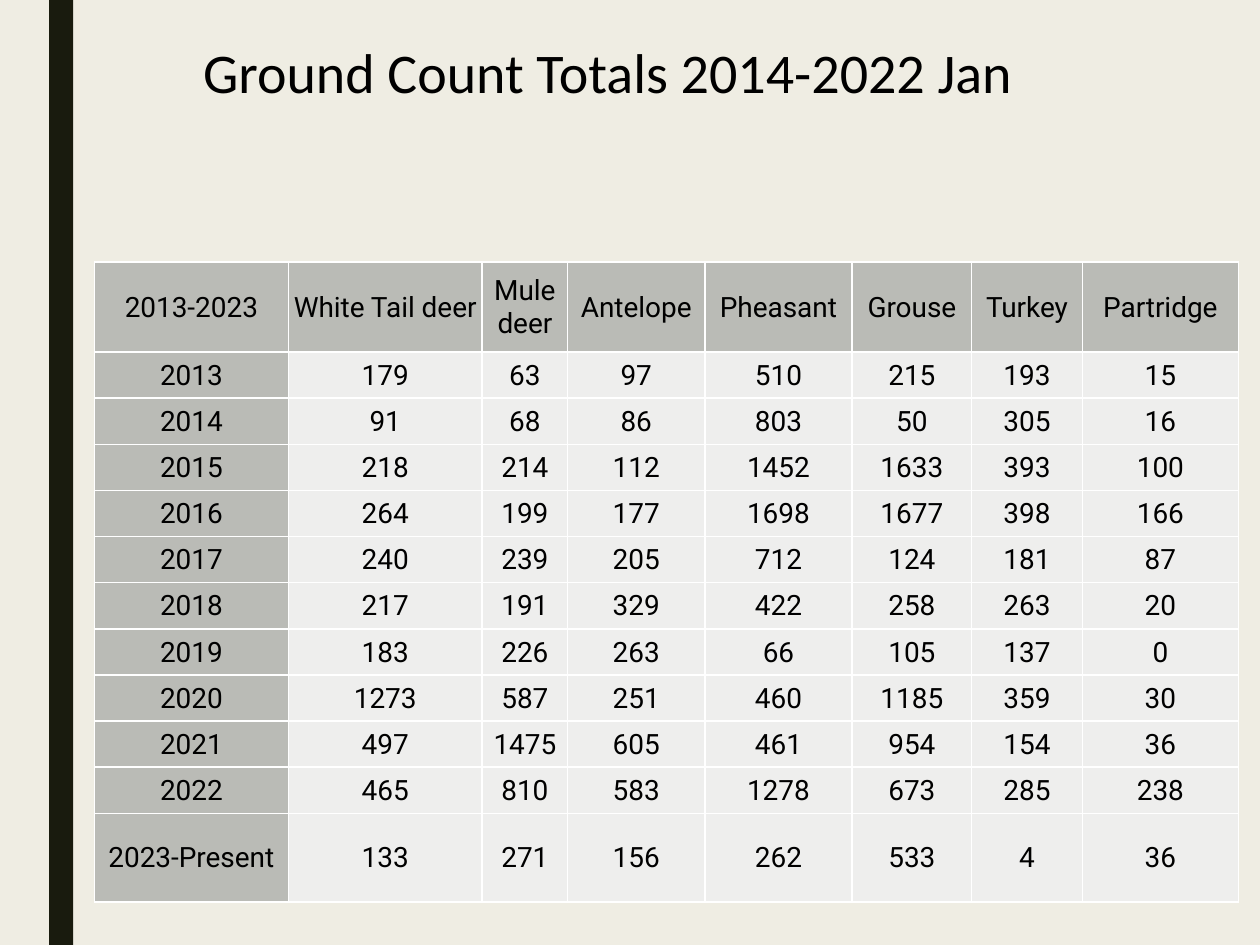
from dataclasses import dataclass

from lxml.etree import SubElement
from pptx import Presentation
from pptx.dml.color import RGBColor
from pptx.enum.shapes import MSO_SHAPE
from pptx.enum.text import MSO_ANCHOR, MSO_AUTO_SIZE, PP_ALIGN
from pptx.oxml.ns import qn
from pptx.util import Inches, Pt

CREAM = RGBColor(0xEF, 0xED, 0xE3)
DARK = RGBColor(0x19, 0x1B, 0x0E)
BLACK = RGBColor(0x00, 0x00, 0x00)
WHITE = RGBColor(0xFF, 0xFF, 0xFF)
HEAD_GRAY = RGBColor(0xBA, 0xBB, 0xB6)
BODY_GRAY = RGBColor(0xEE, 0xEE, 0xED)

SLIDE_W, SLIDE_H = Inches(10), Inches(7.5)
TITLE_ONLY = 5


@dataclass(frozen=True)
class Area:
    """Place and size as percentages of the slide."""
    x: float
    y: float
    w: float
    h: float

    def emu(self) -> tuple[int, int, int, int]:
        return (round(SLIDE_W * self.x / 100), round(SLIDE_H * self.y / 100),
                round(SLIDE_W * self.w / 100), round(SLIDE_H * self.h / 100))


@dataclass(frozen=True)
class Season:
    label: str
    counts: tuple[int, ...]
    weight: float = 1


SIDE_BAR = Area(3.9, 0, 1.9, 100)
TITLE_AREA = Area(9, 4.13, 78.5, 12.53)
TABLE_AREA = Area(7.5, 27.73, 90.8, 67.73)

HEADINGS = ("2013-2023", "White Tail deer", "Mule deer", "Antelope",
            "Pheasant", "Grouse", "Turkey", "Partridge")
COLUMN_WEIGHTS = (1.54, 1.54, 0.68, 1.09, 1.17, 0.95, 0.88, 1.24)
HEADING_WEIGHT = 1.95
SEASONS = (
    Season("2013", (179, 63, 97, 510, 215, 193, 15)),
    Season("2014", (91, 68, 86, 803, 50, 305, 16)),
    Season("2015", (218, 214, 112, 1452, 1633, 393, 100)),
    Season("2016", (264, 199, 177, 1698, 1677, 398, 166)),
    Season("2017", (240, 239, 205, 712, 124, 181, 87)),
    Season("2018", (217, 191, 329, 422, 258, 263, 20)),
    Season("2019", (183, 226, 263, 66, 105, 137, 0)),
    Season("2020", (1273, 587, 251, 460, 1185, 359, 30)),
    Season("2021", (497, 1475, 605, 461, 954, 154, 36)),
    Season("2022", (465, 810, 583, 1278, 673, 285, 238)),
    Season("2023-Present", (133, 271, 156, 262, 533, 4, 36), 1.92),
)


def write(tf, text: str, *, font: str, size: float, color=BLACK,
          align=PP_ALIGN.CENTER, spacing: float = 1) -> None:
    p = tf.paragraphs[0]
    p.alignment = align
    p.line_spacing = spacing
    r = p.add_run()
    r.text = text
    r.font.name = font
    r.font.size = Pt(size)
    r.font.bold = False
    r.font.color.rgb = color


def add_title(slide, text: str) -> None:
    sp = slide.shapes.title
    sp.left, sp.top, sp.width, sp.height = TITLE_AREA.emu()
    tf = sp.text_frame
    tf.word_wrap = True
    tf.auto_size = MSO_AUTO_SIZE.NONE
    tf.vertical_anchor = MSO_ANCHOR.TOP
    write(tf, text, font="Calibri", size=32, spacing=0.89)


def add_bar(slide) -> None:
    sp = slide.shapes.add_shape(MSO_SHAPE.RECTANGLE, *SIDE_BAR.emu())
    sp.shadow.inherit = False
    sp.fill.solid()
    sp.fill.fore_color.rgb = DARK
    sp.line.fill.background()


def set_borders(cell, color: RGBColor, width: float) -> None:
    tc_pr = cell._tc.get_or_add_tcPr()
    for side in ("a:lnL", "a:lnR", "a:lnT", "a:lnB"):
        ln = SubElement(tc_pr, qn(side), w=str(Pt(width)))
        fill = SubElement(ln, qn("a:solidFill"))
        SubElement(fill, qn("a:srgbClr"), val=str(color))


def fill_cell(cell, text: str, color: RGBColor) -> None:
    set_borders(cell, WHITE, 1)
    cell.fill.solid()
    cell.fill.fore_color.rgb = color
    cell.vertical_anchor = MSO_ANCHOR.MIDDLE
    cell.margin_left = cell.margin_right = cell.margin_top = Inches(0.01)
    cell.margin_bottom = 0
    write(cell.text_frame, text, font="Roboto", size=16)


def add_counts(slide) -> None:
    rows = [HEADINGS] + [(s.label, *map(str, s.counts)) for s in SEASONS]
    row_weights = [HEADING_WEIGHT] + [s.weight for s in SEASONS]
    x, y, w, h = TABLE_AREA.emu()
    table = slide.shapes.add_table(len(rows), len(HEADINGS), x, y, w, h).table
    table.first_row = table.horz_banding = False
    for col, weight in zip(table.columns, COLUMN_WEIGHTS):
        col.width = round(w * weight / sum(COLUMN_WEIGHTS))
    for row, weight in zip(table.rows, row_weights):
        row.height = round(h * weight / sum(row_weights))
    for i, texts in enumerate(rows):
        for j, text in enumerate(texts):
            color = BODY_GRAY if i and j else HEAD_GRAY
            fill_cell(table.cell(i, j), text, color)


def main() -> None:
    prs = Presentation()
    prs.slide_width, prs.slide_height = SLIDE_W, SLIDE_H
    slide = prs.slides.add_slide(prs.slide_layouts[TITLE_ONLY])
    slide.background.fill.solid()
    slide.background.fill.fore_color.rgb = CREAM
    add_bar(slide)
    add_title(slide, "Ground Count Totals 2014-2022 Jan")
    add_counts(slide)
    prs.save("out.pptx")


if __name__ == "__main__":
    main()
